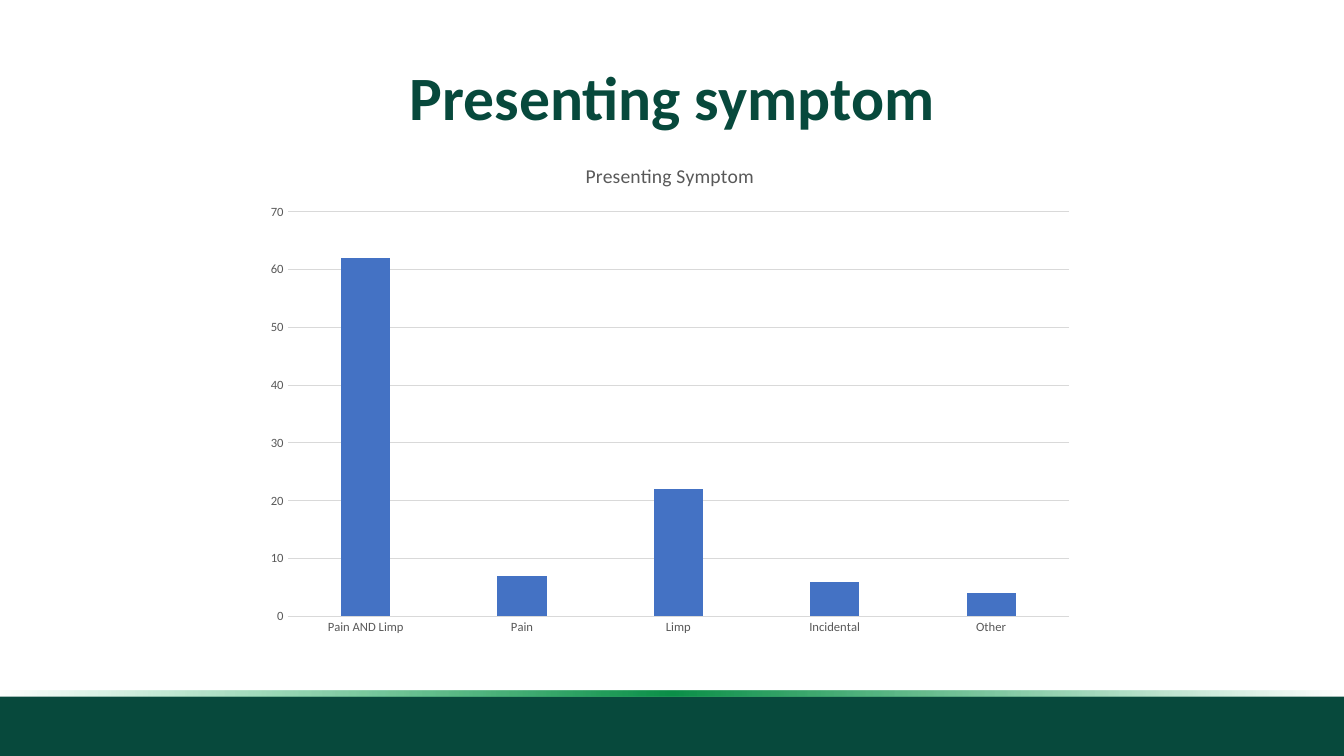
from lxml import etree
from pptx import Presentation
from pptx.chart.data import CategoryChartData
from pptx.dml.color import RGBColor
from pptx.enum.chart import XL_CHART_TYPE, XL_TICK_MARK
from pptx.enum.shapes import MSO_SHAPE
from pptx.enum.text import MSO_ANCHOR, PP_ALIGN
from pptx.oxml.ns import qn
from pptx.util import Inches, Pt

COLUMN = XL_CHART_TYPE.COLUMN_CLUSTERED
NO_TICK = XL_TICK_MARK.NONE
RECT = MSO_SHAPE.RECTANGLE
MIDDLE = MSO_ANCHOR.MIDDLE
CENTER = PP_ALIGN.CENTER

WIDE, HIGH = 13.33, 7.5
FACE = "Calibri"
COLORS = {
    "green": "07493C",
    "left": "0D9D4F",
    "mid": "0C9049",
    "right": "0FAB56",
    "bar": "4472C4",
    "label": "595959",
    "grid": "D9D9D9",
}
COUNTS = {"Pain AND Limp": 62, "Pain": 7, "Limp": 22, "Incidental": 6, "Other": 4}


def tint(name):
    return RGBColor.from_string(COLORS[name])


def style(font, size, name, bold=False):
    font.name = FACE
    font.size = Pt(size)
    font.bold = bold
    font.color.rgb = tint(name)


def add_bar(slide, box):
    bar = slide.shapes.add_shape(RECT, *map(Inches, box))
    bar.shadow.inherit = False
    bar.line.fill.background()
    return bar


def fade(shape, stops):
    shape.fill.gradient()
    shape.fill.gradient_angle = 180
    stop_list = shape.element.spPr.find(qn("a:gradFill")).find(qn("a:gsLst"))
    for old in list(stop_list):
        stop_list.remove(old)
    for place, name, alpha in stops:
        stop = etree.SubElement(stop_list, qn("a:gs"), pos=str(place * 1000))
        color = etree.SubElement(stop, qn("a:srgbClr"), val=COLORS[name])
        etree.SubElement(color, qn("a:alpha"), val=str(alpha * 1000))


def add_footer(slide, box):
    left, top, width, height = box
    edge = 0.06
    base = add_bar(slide, (left, top + edge, width, height - edge))
    base.fill.solid()
    base.fill.fore_color.rgb = tint("green")
    glow = add_bar(slide, (left, top, width, edge))
    fade(glow, [(0, "left", 0), (50, "mid", 100), (100, "right", 0)])


def add_title(slide, box, text):
    frame = slide.shapes.add_textbox(*map(Inches, box)).text_frame
    frame.word_wrap = True
    frame.vertical_anchor = MIDDLE
    line = frame.paragraphs[0]
    line.text = text
    line.alignment = CENTER
    line.line_spacing = 0.9
    style(line.font, 44, "green", True)


def rule(line):
    line.color.rgb = tint("grid")
    line.width = Pt(0.75)


def add_columns(slide, box, title, counts):
    data = CategoryChartData()
    data.categories = list(counts)
    data.add_series("Series 1", list(counts.values()))
    chart = slide.shapes.add_chart(COLUMN, *map(Inches, box), data).chart
    style(chart.font, 10, "label")
    chart.has_legend = False
    chart.has_title = True
    head = chart.chart_title.text_frame.paragraphs[0]
    head.text = title
    style(head.font, 14, "label")
    chart.chart_title.include_in_layout = False

    for axis in (chart.category_axis, chart.value_axis):
        axis.major_tick_mark = NO_TICK
        axis.minor_tick_mark = NO_TICK
        style(axis.tick_labels.font, 9, "label")
    rule(chart.category_axis.format.line)
    scale = chart.value_axis
    scale.minimum_scale, scale.maximum_scale, scale.major_unit = 0, 70, 10
    scale.format.line.fill.background()
    rule(scale.major_gridlines.format.line)

    plot = chart.plots[0]
    plot.gap_width = 219
    plot.overlap = -27
    plot.vary_by_categories = False
    fill = plot.series[0].format.fill
    fill.solid()
    fill.fore_color.rgb = tint("bar")


def main():
    deck = Presentation()
    deck.slide_width, deck.slide_height = Inches(WIDE), Inches(HIGH)
    slide = deck.slides.add_slide(deck.slide_layouts[6])
    add_footer(slide, (0, 6.85, WIDE, HIGH - 6.85))
    add_title(slide, (0.92, 0.4, 11.5, 1.19), "Presenting symptom")
    add_columns(slide, (2.52, 1.42, 8.25, 4.98), "Presenting Symptom", COUNTS)
    deck.save("out.pptx")


if __name__ == "__main__":
    main()
